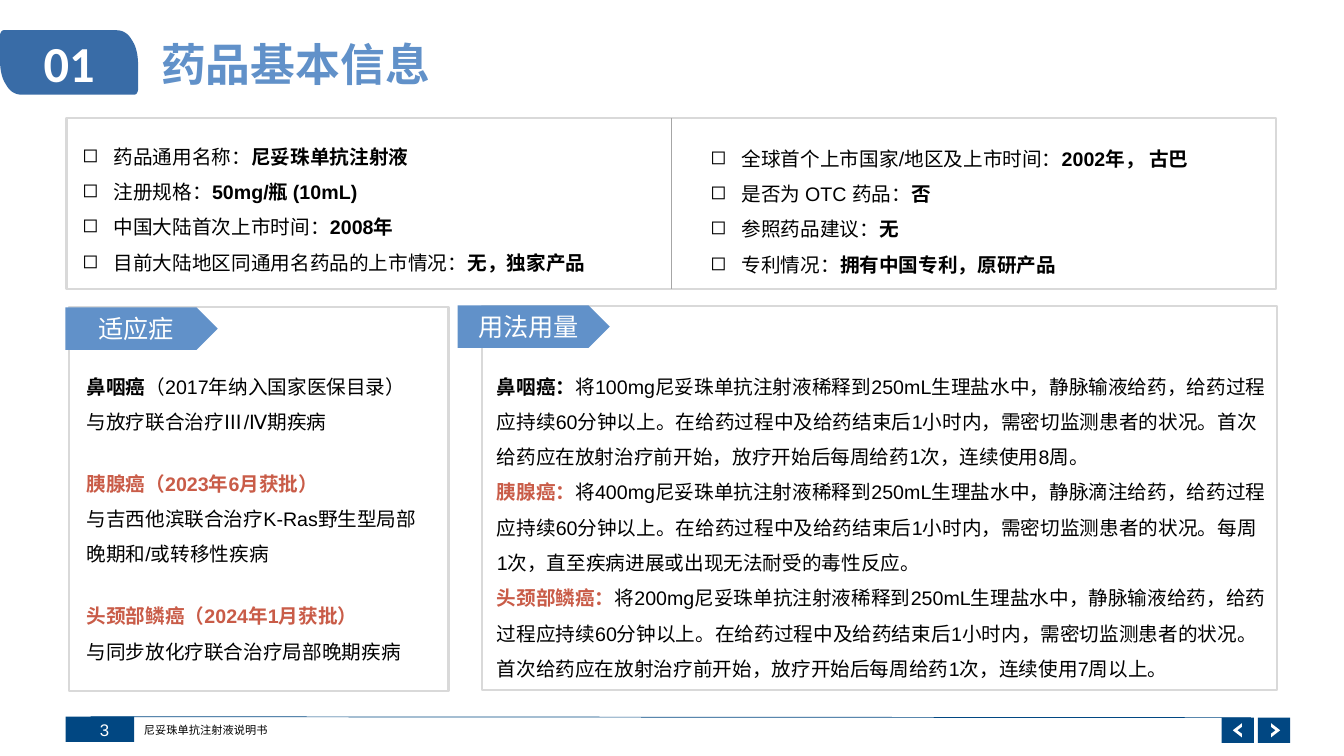
"""Build the basic drug information slide."""
from lxml import etree
from pptx import Presentation
from pptx.dml.color import RGBColor
from pptx.enum.shapes import MSO_CONNECTOR, MSO_SHAPE
from pptx.enum.text import MSO_ANCHOR, PP_ALIGN
from pptx.oxml.ns import qn
from pptx.util import Inches, Pt

RECT, TAG = MSO_SHAPE.RECTANGLE, MSO_SHAPE.PENTAGON
STRAIGHT = MSO_CONNECTOR.STRAIGHT
TOP, MIDDLE = MSO_ANCHOR.TOP, MSO_ANCHOR.MIDDLE
LEFT, CENTER, RIGHT = PP_ALIGN.LEFT, PP_ALIGN.CENTER, PP_ALIGN.RIGHT

COLORS = {
    "badge": "396CA7", "accent": "6191C9", "navy": "014782", "alert": "C95C48",
    "ink": "000000", "white": "FFFFFF", "frame": "D9D9D9", "divider": "A6A6A6",
}

SECTION = "01"
TITLE = "药品基本信息"
PAGE = "3"
FOOTER = "尼妥珠单抗注射液说明书"

# Each fact is a label and its value.
FACTS = [
    ((8.64, 15.12, 70.8, 18.24), [
        ("药品通用名称：", "尼妥珠单抗注射液"),
        ("注册规格：", "50mg/瓶 (10mL)"),
        ("中国大陆首次上市时间：", "2008年"),
        ("目前大陆地区同通用名药品的上市情况：", "无，独家产品"),
    ]),
    ((83.4, 15.36, 67.2, 18.24), [
        ("全球首个上市国家/地区及上市时间：", "2002年， 古巴"),
        ("是否为 OTC 药品：", "否"),
        ("参照药品建议：", "无"),
        ("专利情况：", "拥有中国专利，原研产品"),
    ]),
]

INDICATIONS = [
    [("鼻咽癌", "ink"), "（2017年纳入国家医保目录）"],
    ["与放疗联合治疗Ⅲ/Ⅳ期疾病"],
    [("胰腺癌（2023年6月获批）", "alert")],
    ["与吉西他滨联合治疗K-Ras野生型局部晚期和/或转移性疾病"],
    [("头颈部鳞癌（2024年1月获批）", "alert")],
    ["与同步放化疗联合治疗局部晚期疾病"],
]

INFUSION = ("生理盐水中，静脉{}给药，给药过程应持续60分钟以上。"
            "在给药过程中及给药结束后1小时内，需密切监测患者的状况。")
COURSE = "首次给药应在放射治疗前开始，放疗开始后每周给药1次，连续使用{}。"
DOSES = [
    ("鼻咽癌：", "ink", "100mg", "输液", COURSE.format("8周")),
    ("胰腺癌：", "alert", "400mg", "滴注", "每周1次，直至疾病进展或出现无法耐受的毒性反应。"),
    ("头颈部鳞癌：", "alert", "200mg", "输液", COURSE.format("7周以上")),
]
DOSAGE = [
    [(disease, color), f"将{dose}尼妥珠单抗注射液稀释到250mL" + INFUSION.format(route) + course]
    for disease, color, dose, route, course in DOSES
]

OVERVIEW = (7.92, 14.04, 144, 20.4)
PANELS = [
    ("适应症", (7.8, 36.6), (8.16, 36.6, 45.24, 45.72), (9.12, 42.6, 43.2, 38.16), INDICATIONS),
    ("用法用量", (54.48, 36.36), (57.36, 36.48, 94.68, 45.72), (57.96, 42.6, 94.08, 39), DOSAGE),
]
TAG_SIZE = (18.12, 5.04)

BADGE_CENTER = (8.22, 7.44)
BADGE_CURVES = [
    [(5.58, -3.84), (6.42, -3.84), (7.02, -3.48), (7.5, -2.64)],
    [(7.5, -2.64), (7.98, -1.92), (8.22, -0.96), (8.22, 0.36)],
    [(8.22, 3.12), (8.22, 3.6), (7.98, 3.84), (7.74, 3.84)],
]
CHEVRON = [(-0.54, -0.84), (-0.54, -0.4), (0, 0), (-0.54, 0.4), (-0.54, 0.84), (0.54, 0)]
BUTTONS = [(145.44, 1.86, -1), (149.76, 2.1, 1)]
BUTTON_TOP, BUTTON_SIZE = 85.44, (3.84, 3)

COLUMNS, ROWS = 160, 90
SLIDE_W, SLIDE_H = Inches(13.33), Inches(7.5)

prs = Presentation()
prs.slide_width, prs.slide_height = SLIDE_W, SLIDE_H
slide = prs.slides.add_slide(prs.slide_layouts[6])
shapes = slide.shapes


def col(n):
    return round(n * SLIDE_W / COLUMNS)


def row(n):
    return round(n * SLIDE_H / ROWS)


def place(box):
    left, top, width, height = box
    return col(left), row(top), col(width), row(height)


def rgb(name):
    return RGBColor.from_string(COLORS[name])


def paint(shape, fill=None, line=None):
    shape.shadow.inherit = False
    if fill:
        shape.fill.solid()
        shape.fill.fore_color.rgb = rgb(fill)
    else:
        shape.fill.background()
    if line:
        shape.line.color.rgb = rgb(line)
        shape.line.width = Pt(1.5)
    else:
        shape.line.fill.background()
    return shape


def add_box(box, fill=None, line=None, kind=RECT):
    return paint(shapes.add_shape(kind, *place(box)), fill, line)


def add_outline(points, fill):
    corners = [(col(x), row(y)) for x, y in points]
    builder = shapes.build_freeform(*corners[0])
    builder.add_line_segments(corners[1:], close=True)
    return paint(builder.convert_to_shape(), fill)


def add_line(start, end, color, width):
    line = shapes.add_connector(STRAIGHT, col(start[0]), row(start[1]), col(end[0]), row(end[1]))
    line.line.color.rgb = rgb(color)
    line.line.width = Pt(width)
    etree.SubElement(line._element.spPr, qn("a:effectLst"))
    return line


def write(shape, paragraphs, size, color="ink", bold=False, font="Arial",
          align=LEFT, anchor=TOP, spacing=None, bullet=None):
    frame = shape.text_frame
    frame.word_wrap = True
    frame.vertical_anchor = anchor
    for i, parts in enumerate(paragraphs):
        paragraph = frame.add_paragraph() if i else frame.paragraphs[0]
        paragraph.alignment = align
        if spacing:
            paragraph.line_spacing = spacing
        if bullet:
            props = paragraph._p.get_or_add_pPr()
            props.set("marL", str(Inches(0.31)))
            props.set("indent", str(-Inches(0.31)))
            etree.SubElement(props, qn("a:buChar"), char=bullet)
        paragraph.font.name, paragraph.font.size = font, Pt(size)
        for part in parts:
            text, strong = (part, None) if isinstance(part, str) else part
            run = paragraph.add_run()
            run.text = text
            run.font.bold = bold or bool(strong)
            run.font.color.rgb = rgb(strong or color)
    return frame


def add_text(box, paragraphs, size, **style):
    return write(shapes.add_textbox(*place(box)), paragraphs, size, **style)


def bezier(curve, steps=10):
    for i in range(steps + 1):
        t = i / steps
        weights = ((1 - t) ** 3, 3 * t * (1 - t) ** 2, 3 * t * t * (1 - t), t ** 3)
        yield tuple(sum(w * p[axis] for w, p in zip(weights, curve)) for axis in (0, 1))


half = [point for curve in BADGE_CURVES for point in bezier(curve)]
cx, cy = BADGE_CENTER
badge = add_outline([(cx + s * x, cy + s * y) for s in (1, -1) for x, y in half], "badge")
write(badge, [[SECTION]], 36, color="white", bold=True, font="Calibri", align=CENTER, anchor=MIDDLE)
add_text((18, 2.52, 135.12, 10.2), [[TITLE]], 32, color="accent", bold=True, anchor=MIDDLE)

overview = add_box(OVERVIEW, line="frame")
middle = OVERVIEW[0] + OVERVIEW[2] / 2
divider = add_line((middle, OVERVIEW[1]), (middle, OVERVIEW[1] + OVERVIEW[3]), "divider", 0.75)
divider.begin_connect(overview, 0)
divider.end_connect(overview, 2)
for box, facts in FACTS:
    add_text(box, [[label, (value, "ink")] for label, value in facts], 14,
             anchor=MIDDLE, spacing=1.5, bullet="◻")

for heading, corner, frame_box, text_box, paragraphs in PANELS:
    add_box(frame_box, line="frame")
    tag = add_box(corner + TAG_SIZE, "accent", kind=TAG)
    write(tag, [[heading]], 18, color="white", align=CENTER, anchor=MIDDLE)
    body = add_text(text_box, paragraphs, 14, spacing=1.5)
    if paragraphs is INDICATIONS:
        for disease in body.paragraphs[2::2]:
            disease.space_before = Pt(19)

add_line((10.8, 85.32), (148.92, 85.44), "navy", 0.5)
add_box((7.8, 85.32, 8.16, 3), "navy")
add_text((7.2, 85.32, 6.96, 3.12), [[PAGE]], 12, color="white", align=RIGHT, anchor=MIDDLE)
add_text((15.96, 85.56, 137.16, 4.4), [[FOOTER]], 8)
for left, offset, side in BUTTONS:
    add_box((left, BUTTON_TOP) + BUTTON_SIZE, "navy")
    center_y = BUTTON_TOP + BUTTON_SIZE[1] / 2
    add_outline([(left + offset + side * x, center_y + y) for x, y in CHEVRON], "white")

prs.save("out.pptx")
